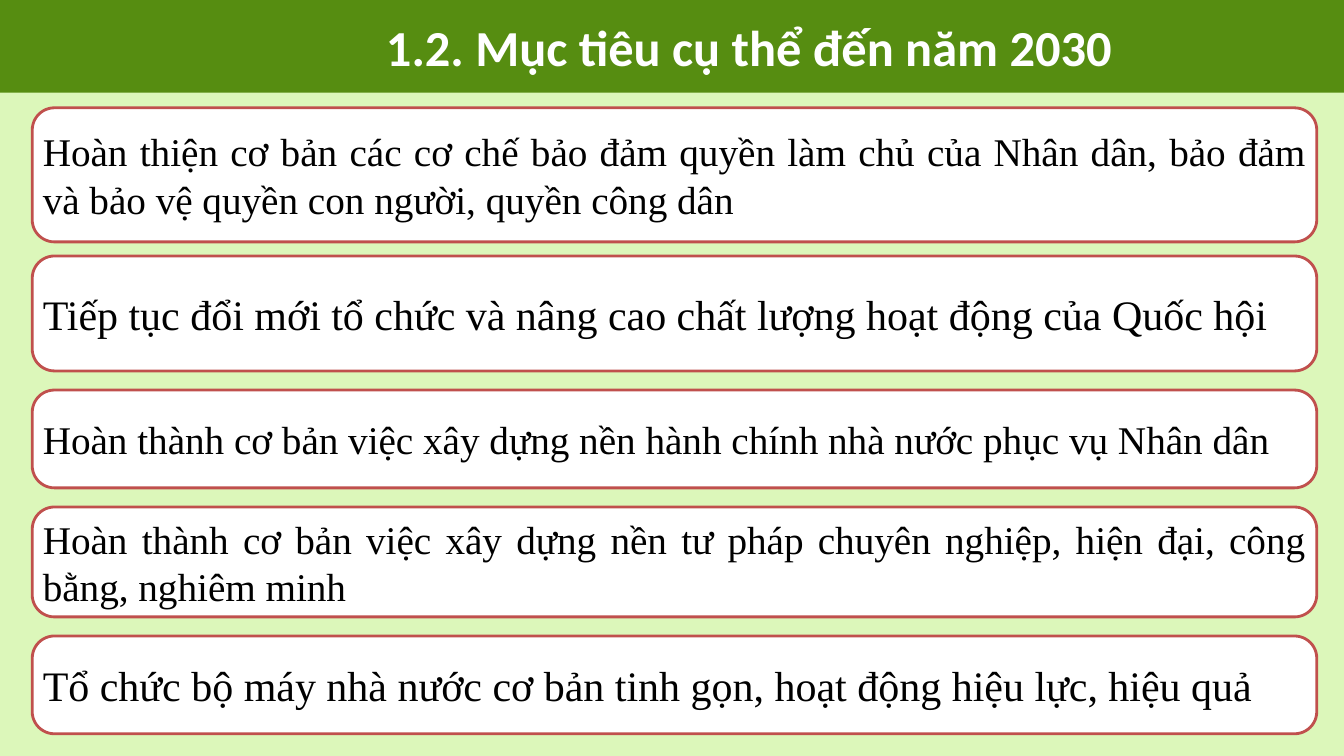
from pptx import Presentation
from pptx.dml.color import RGBColor
from pptx.enum.shapes import MSO_SHAPE
from pptx.enum.text import MSO_ANCHOR, PP_ALIGN
from pptx.util import Inches, Pt

RECT, ROUNDED = MSO_SHAPE.RECTANGLE, MSO_SHAPE.ROUNDED_RECTANGLE
TOP, MIDDLE = MSO_ANCHOR.TOP, MSO_ANCHOR.MIDDLE
LEFT, CENTER, JUSTIFY = PP_ALIGN.LEFT, PP_ALIGN.CENTER, PP_ALIGN.JUSTIFY

TITLE = "1.2. Mục tiêu cụ thể đến năm 2030"
# top, height, font size, alignment, text
GOALS = [
    (1.07, 1.33, 28, JUSTIFY, "Hoàn thiện cơ bản các cơ chế bảo đảm quyền làm chủ của Nhân dân, "
     "bảo đảm và bảo vệ quyền con người, quyền công dân"),
    (2.54, 1.14, 30, JUSTIFY, "Tiếp tục đổi mới tổ chức và nâng cao chất lượng hoạt động của Quốc hội"),
    (3.87, 0.97, 28, JUSTIFY, "Hoàn thành cơ bản việc xây dựng nền hành chính nhà nước phục vụ Nhân dân"),
    (5.03, 1.09, 28, JUSTIFY, "Hoàn thành cơ bản việc xây dựng nền tư pháp chuyên nghiệp, "
     "hiện đại, công bằng, nghiêm minh"),
    (6.31, 0.97, 30, LEFT, "Tổ chức bộ máy nhà nước cơ bản tinh gọn, hoạt động hiệu lực, hiệu quả"),
]
COLORS = {"band": "568D11", "page": "DCF7BA", "card": "FFFFFF",
          "border": "C0504D", "title": "FFFFFF", "text": "000000"}
SLIDE_W, SLIDE_H, BAND_H = 13.33, 7.5, 0.92
CARD_X, CARD_W, RADIUS = 0.32, 12.74, 0.22
CARD_MARGIN = 0.04


def color(name):
    return RGBColor.from_string(COLORS[name])


def set_text(sp, text, font, size, color_name, align, anchor, bold=False):
    tf = sp.text_frame
    tf.text = text
    tf.word_wrap = True
    tf.vertical_anchor = anchor
    p = tf.paragraphs[0]
    p.alignment = align
    f = p.runs[0].font
    f.name, f.size, f.bold = font, Pt(size), bold
    f.color.rgb = color(color_name)


def add_box(s, kind, x, y, w, h, fill):
    sp = s.shapes.add_shape(kind, Inches(x), Inches(y), Inches(w), Inches(h))
    sp.shadow.inherit = False
    sp.fill.solid()
    sp.fill.fore_color.rgb = color(fill)
    return sp


def add_title(s):
    band = add_box(s, RECT, 0, 0, SLIDE_W, BAND_H, "band")
    band.line.fill.background()
    title = s.shapes.title
    title.element.addprevious(band.element)  # the band lies behind the title
    title.left, title.top = Inches(1.64), Inches(0.11)
    title.width, title.height = Inches(11.53), Inches(0.71)
    set_text(title, TITLE, "Calibri", 36, "title", CENTER, TOP, bold=True)
    title.text_frame.margin_left = Inches(0.15)


def add_goal(s, top, height, size, align, text):
    card = add_box(s, ROUNDED, CARD_X, top, CARD_W, height, "card")
    card.adjustments[0] = RADIUS / height
    card.line.color.rgb = color("border")
    card.line.width = Pt(2)
    set_text(card, text, "Times New Roman", size, "text", align, MIDDLE)
    tf = card.text_frame
    tf.margin_left = tf.margin_right = Inches(CARD_MARGIN)
    tf.margin_top = tf.margin_bottom = 0


def main():
    prs = Presentation()
    prs.slide_width, prs.slide_height = Inches(SLIDE_W), Inches(SLIDE_H)
    s = prs.slides.add_slide(prs.slide_layouts[5])
    s.background.fill.solid()
    s.background.fill.fore_color.rgb = color("page")
    add_title(s)
    for goal in GOALS:
        add_goal(s, *goal)
    prs.save("out.pptx")


if __name__ == "__main__":
    main()
